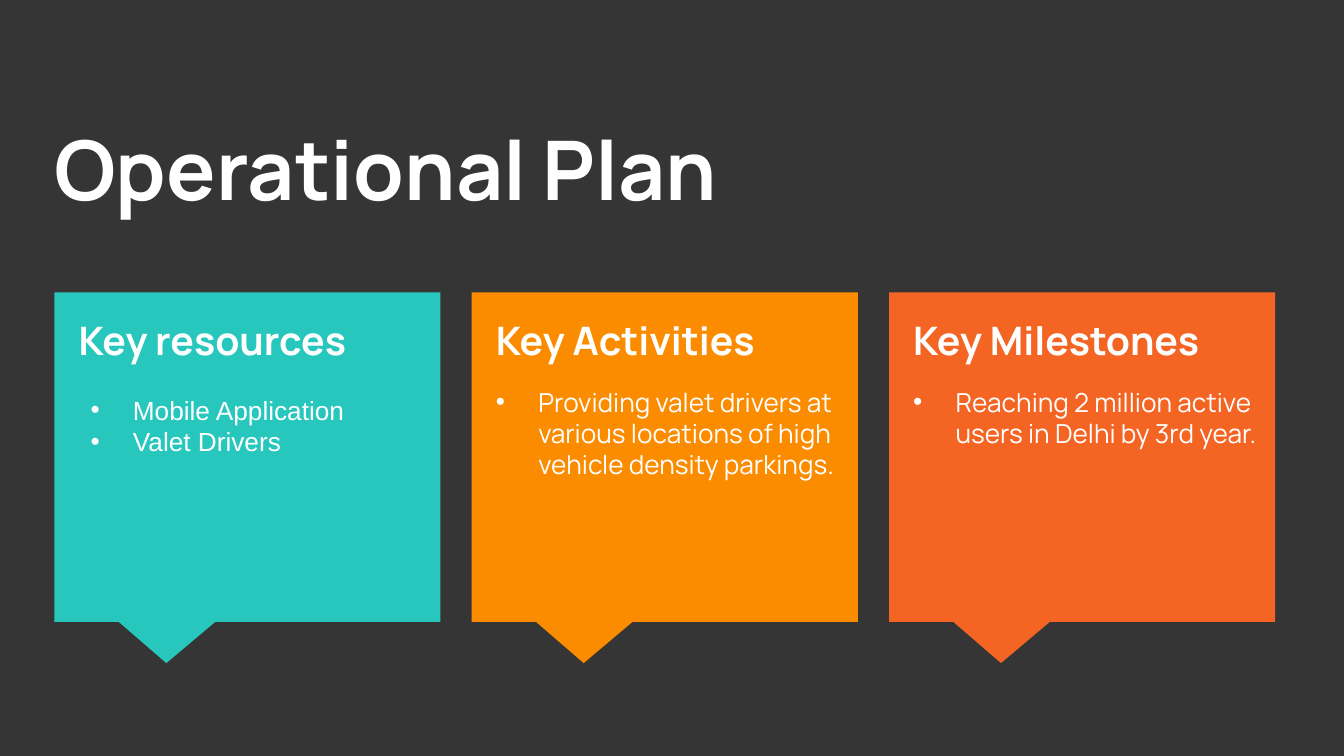
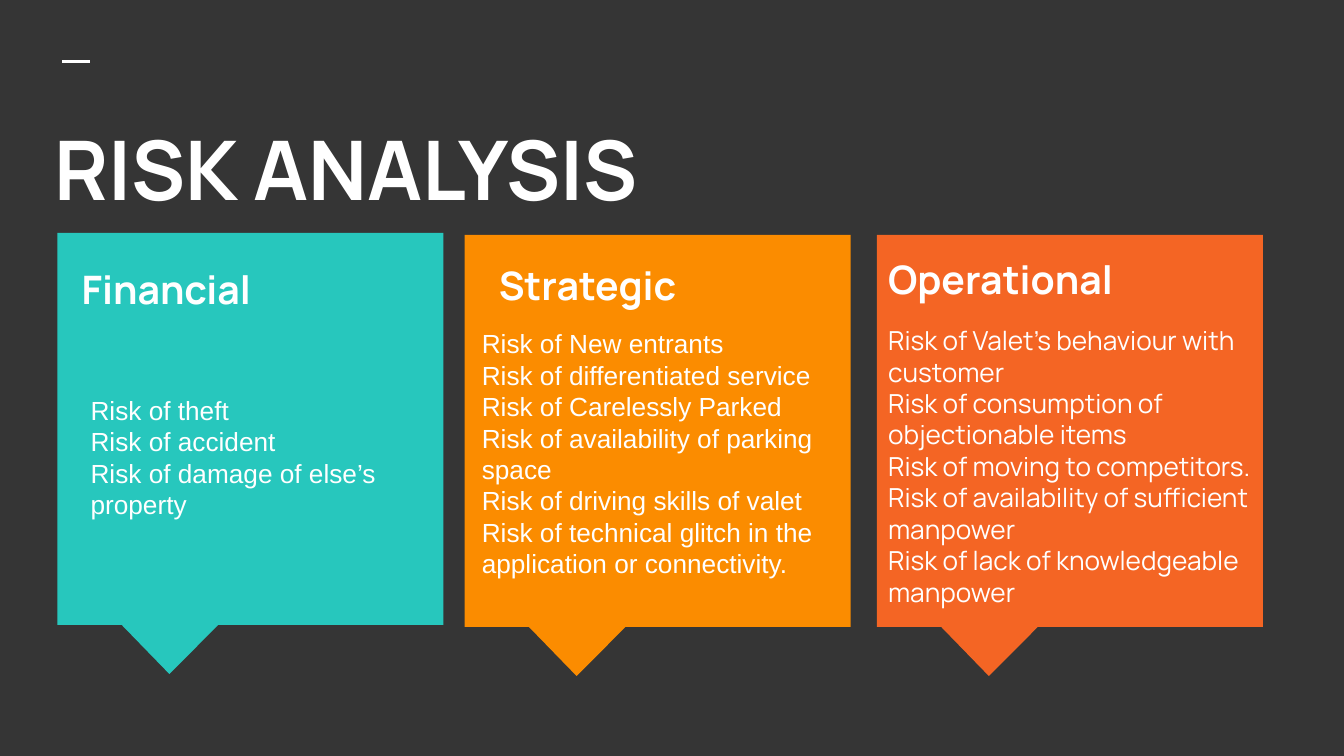
from dataclasses import dataclass

from lxml import etree
from pptx import Presentation
from pptx import util as u
from pptx.dml.color import RGBColor
from pptx.enum import shapes, text
from pptx.oxml import ns


@dataclass(frozen=True)
class Theme:
    background: str = "353535"
    ink: str = "FFFFFF"
    cards: tuple = ("27C7BD", "FB8C00", "F46524")
    display: str = "Manrope"
    plain: str = "Arial"
    title: float = 58.7
    heading: float = 28
    body: float = 18.7
    gap: float = 16
    indent: float = 0.42


theme = Theme()
WIDE_INSET = (0.13, 0.13)
SLIM_INSET = (0.1, 0.05)

presentation = Presentation()
presentation.slide_width = u.Inches(13.33)
presentation.slide_height = u.Inches(7.5)

# Grid: 40 columns by 30 rows
COLUMN = presentation.slide_width / 40
ROW = presentation.slide_height / 30

# Shared background
background = presentation.slide_master.background.fill
background.solid()
background.fore_color.rgb = RGBColor.from_string(theme.background)


def place(left, top, width, height):
    """Turn grid columns and rows into slide lengths."""
    return [int(left * COLUMN), int(top * ROW), int(width * COLUMN), int(height * ROW)]


def write(shape, lines, inset=WIDE_INSET):
    """Fill a shape with lines of (words, size, font, bold, bullet, space before)."""
    frame = shape.text_frame
    frame.word_wrap = True
    frame.auto_size = text.MSO_AUTO_SIZE.NONE
    frame.vertical_anchor = text.MSO_ANCHOR.TOP
    frame.margin_left = frame.margin_right = u.Inches(inset[0])
    frame.margin_top = frame.margin_bottom = u.Inches(inset[1])
    for index, (words, size, font, bold, bullet, before) in enumerate(lines):
        paragraph = frame.add_paragraph() if index else frame.paragraphs[0]
        paragraph.alignment = text.PP_ALIGN.LEFT
        if before:
            paragraph.space_before = u.Pt(before)
        if font == theme.plain:
            paragraph.line_spacing = u.Pt(size * 1.2)
        if bullet:
            properties = paragraph._p.get_or_add_pPr()
            properties.set("marL", str(u.Inches(theme.indent)))
            properties.set("indent", str(-u.Inches(theme.indent)))
            color = etree.SubElement(properties, ns.qn("a:buClr"))
            etree.SubElement(color, ns.qn("a:srgbClr"), val=theme.ink)
            etree.SubElement(properties, ns.qn("a:buFont"), typeface=theme.plain)
            etree.SubElement(properties, ns.qn("a:buChar"), char="•")
        run = paragraph.add_run()
        run.text = words
        run.font.size = u.Pt(size)
        run.font.name = font
        run.font.bold = bold
        run.font.color.rgb = RGBColor.from_string(theme.ink)


# Content: cards are places; each text block is
# (place, inset, heading, body font, bullets, body lines)
slides = [
    {
        "title": "Operational Plan",
        "dash": False,
        "cards": [(1.62 + 12.42 * n, 11.6, 11.49, 13.08) for n in range(3)],
        "blocks": [
            ((1.95, 12.04, 11.16, 11.68), WIDE_INSET, "Key resources", theme.display, False, []),
            ((2.4, 15.44, 9.96, 4.16), SLIM_INSET, None, theme.plain, True,
             ["Mobile Application", "Valet Drivers"]),
            ((14.37, 12.04, 11.16, 11.68), WIDE_INSET, "Key Activities", theme.display, True,
             ["Providing valet drivers at various locations of high vehicle density parkings."]),
            ((26.79, 12.04, 11.16, 11.68), WIDE_INSET, "Key Milestones", theme.display, True,
             ["Reaching 2 million active users in Delhi by 3rd year."]),
        ],
    },
    {
        "title": "RISK ANALYSIS",
        "dash": True,
        "cards": [(left, top, 11.49, 15.56)
                  for left, top in ((1.71, 9.24), (13.83, 9.32), (26.1, 9.32))],
        "blocks": [
            ((2.04, 10, 10.86, 11.68), WIDE_INSET, "Financial", theme.display, False, []),
            ((2.4, 15.44, 9.96, 6.68), SLIM_INSET, None, theme.plain, False,
             ["Risk of theft", "Risk of accident", "Risk of damage of else’s property"]),
            ((14.55, 10.16, 7.2, 2.28), SLIM_INSET, "Strategic", theme.display, False, []),
            ((13.95, 12.48, 12.09, 13.76), WIDE_INSET, None, theme.plain, False,
             ["Risk of New entrants", "Risk of differentiated service",
              "Risk of Carelessly Parked", "Risk of availability of parking space",
              "Risk of driving skills of valet",
              "Risk of technical glitch in the application or connectivity."]),
            ((26.04, 9.6, 12.09, 15), WIDE_INSET, "Operational", theme.display, False,
             ["Risk of Valet’s behaviour with customer",
              "Risk of consumption of objectionable items",
              "Risk of moving to competitors.",
              "Risk of availability of sufficient manpower",
              "Risk of lack of knowledgeable manpower"]),
        ],
    },
]

for content in slides:
    slide = presentation.slides.add_slide(presentation.slide_layouts[5])

    # Title
    title = slide.shapes.title
    title.left, title.top, title.width, title.height = place(1.23, 4.16, 37.71, 5.96)
    write(title, [(content["title"], theme.title, theme.display, True, False, 0)])

    # Short dash above the title
    if content["dash"]:
        left, top, width, _ = place(1.86, 2.44, 0.81, 0)
        dash = slide.shapes.add_connector(
            shapes.MSO_CONNECTOR.STRAIGHT, left, top, left + width, top)
        dash.line.color.rgb = RGBColor.from_string(theme.ink)
        dash.line.width = u.Pt(1.5)
        etree.SubElement(dash._element.spPr, ns.qn("a:effectLst"))

    # Callout cards
    for box, color in zip(content["cards"], theme.cards):
        card = slide.shapes.add_shape(shapes.MSO_SHAPE.RECTANGULAR_CALLOUT, *place(*box))
        card.adjustments[0] = -0.21
        card.adjustments[1] = 0.625
        card.shadow.inherit = False
        card.fill.solid()
        card.fill.fore_color.rgb = RGBColor.from_string(color)
        card.line.fill.background()

    # Headings and lists on the cards
    for box, inset, heading, font, bullet, body in content["blocks"]:
        lines = [(heading, theme.heading, theme.display, True, False, 0)] if heading else []
        for index, words in enumerate(body):
            before = theme.gap if heading and index == 0 else 0
            lines.append((words, theme.body, font, False, bullet, before))
        write(slide.shapes.add_textbox(*place(*box)), lines, inset)

presentation.save("out.pptx")
